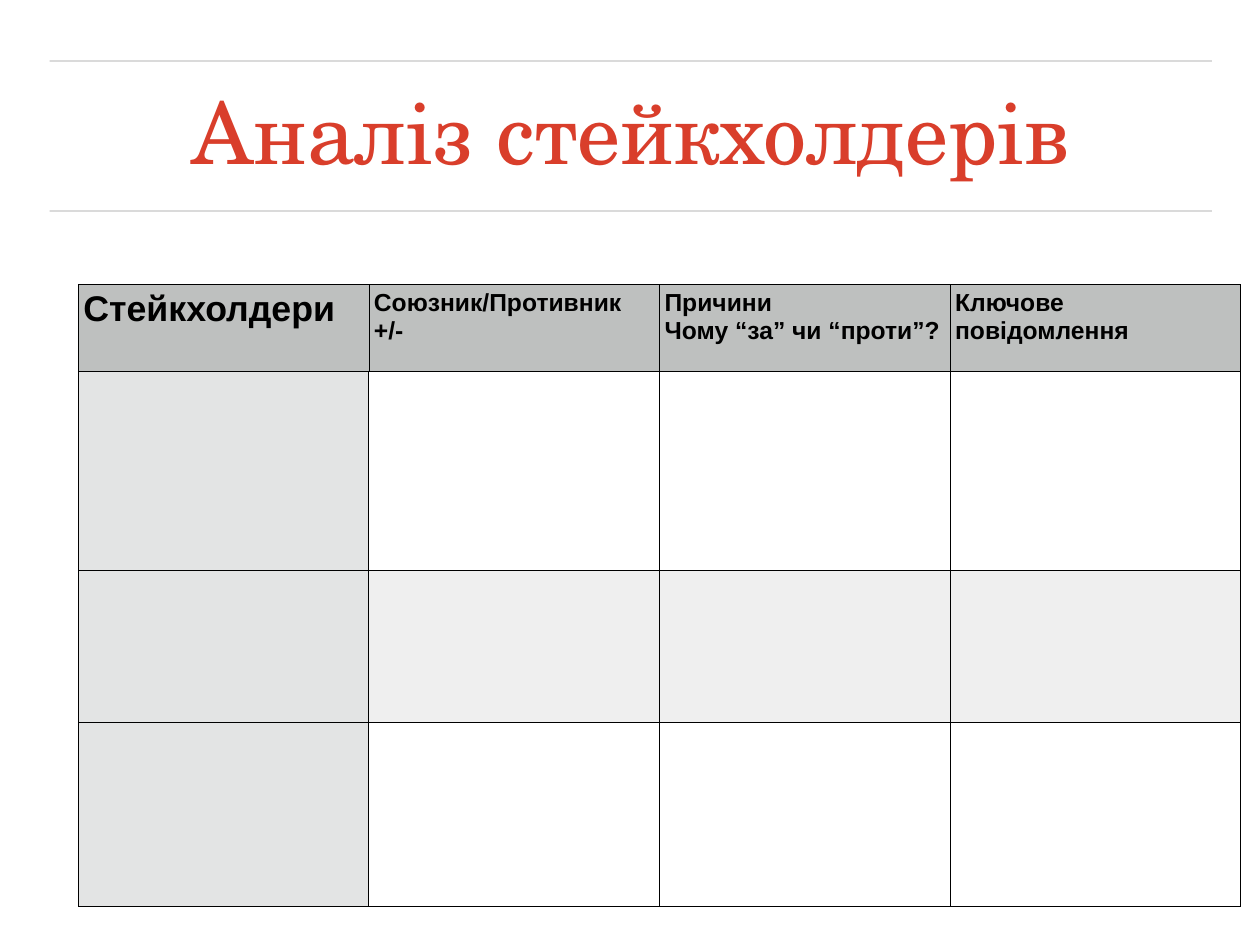
import lxml.etree
import pptx
import pptx.dml.color
import pptx.enum.shapes
import pptx.enum.text
import pptx.oxml.ns
import pptx.util

Cm = pptx.util.Cm
Pt = pptx.util.Pt
RGBColor = pptx.dml.color.RGBColor
qn = pptx.oxml.ns.qn

RED = RGBColor(0xD9, 0x3E, 0x2B)
BLACK = RGBColor(0, 0, 0)
RULE_GRAY = RGBColor(0x44, 0x44, 0x44)
HEADER_GRAY = RGBColor(0xBE, 0xC0, 0xBF)
FIRST_COLUMN_GRAY = RGBColor(0xE3, 0xE4, 0xE4)
BAND_GRAY = RGBColor(0xEF, 0xEF, 0xEF)

LEFT = 1.42
WIDTH = 33.32
INSET = Cm(0.15)
HEADERS = [
    "Стейкхолдери",
    "Союзник/Противник\n+/-",
    "Причини\nЧому “за” чи “проти”?",
    "Ключове повідомлення",
]
ROW_HEIGHTS = [2.51, 5.69, 4.37, 5.28]


def set_border(cell, side, width):
    properties = cell._tc.get_or_add_tcPr()
    line = lxml.etree.SubElement(properties, qn(f"a:ln{side}"), w=str(Pt(width)))
    fill = lxml.etree.SubElement(line, qn("a:solidFill"))
    lxml.etree.SubElement(fill, qn("a:srgbClr"), val=str(BLACK))


presentation = pptx.Presentation()
presentation.slide_width = Cm(36.12)
presentation.slide_height = Cm(27.1)
slide = presentation.slides.add_slide(presentation.slide_layouts[5])

# Rules above and below the title
for y in (6.05, 1.75):
    rule = slide.shapes.add_connector(
        pptx.enum.shapes.MSO_CONNECTOR.STRAIGHT,
        Cm(LEFT), Cm(y), Cm(LEFT + WIDTH), Cm(y))
    rule.line.width = Pt(1)
    rule.line.color.rgb = RULE_GRAY
    color = rule.line._ln.find(".//" + qn("a:srgbClr"))
    lxml.etree.SubElement(color, qn("a:alpha"), val="30000")
    lxml.etree.SubElement(rule._element.spPr, qn("a:effectLst"))

# Title
title = slide.shapes.title
title.left, title.top, title.width, title.height = Cm(LEFT), Cm(2.24), Cm(WIDTH), Cm(3.38)
frame = title.text_frame
frame.text = "Аналіз стейкхолдерів"
frame.word_wrap = True
frame.auto_size = pptx.enum.text.MSO_AUTO_SIZE.NONE
frame.vertical_anchor = pptx.enum.text.MSO_ANCHOR.MIDDLE
frame.margin_left = frame.margin_right = frame.margin_top = frame.margin_bottom = INSET
paragraph = frame.paragraphs[0]
paragraph.alignment = pptx.enum.text.PP_ALIGN.CENTER
paragraph.line_spacing = 0.9
paragraph.font.name = "TeX Gyre Schola"
paragraph.font.size = Pt(70)
paragraph.font.color.rgb = RED

# Stakeholder table
table = slide.shapes.add_table(
    len(ROW_HEIGHTS), len(HEADERS),
    Cm(2.24), Cm(8.15), Cm(WIDTH), Cm(sum(ROW_HEIGHTS))).table
table.first_row = False
table.horz_banding = False
for column in table.columns:
    column.width = Cm(WIDTH / len(HEADERS))

for row_index, height in enumerate(ROW_HEIGHTS):
    table.rows[row_index].height = Cm(height)
    for column_index, header in enumerate(HEADERS):
        cell = table.cell(row_index, column_index)
        cell.margin_left = cell.margin_right = cell.margin_top = cell.margin_bottom = INSET

        # Edges next to the header row and the first column are heavier
        is_body = row_index > 0
        set_border(cell, "L", 0.5 if is_body and column_index == 1 else 0.25)
        set_border(cell, "R", 0.5 if is_body and column_index == 0 else 0.25)
        set_border(cell, "T", 0.5 if row_index == 1 else 0.25)
        set_border(cell, "B", 0.5 if row_index == 0 else 0.25)

        if row_index == 0:
            fill_color = HEADER_GRAY
        elif column_index == 0:
            fill_color = FIRST_COLUMN_GRAY
        else:
            fill_color = BAND_GRAY if row_index == 2 else None
        if fill_color is None:
            cell.fill.background()
        else:
            cell.fill.solid()
            cell.fill.fore_color.rgb = fill_color

        if row_index == 0:
            cell.text = header
            for paragraph in cell.text_frame.paragraphs:
                paragraph.font.name = "Arial"
                paragraph.font.size = Pt(29 if column_index == 0 else 20)
                paragraph.font.bold = True
                paragraph.font.color.rgb = BLACK

presentation.save("out.pptx")
